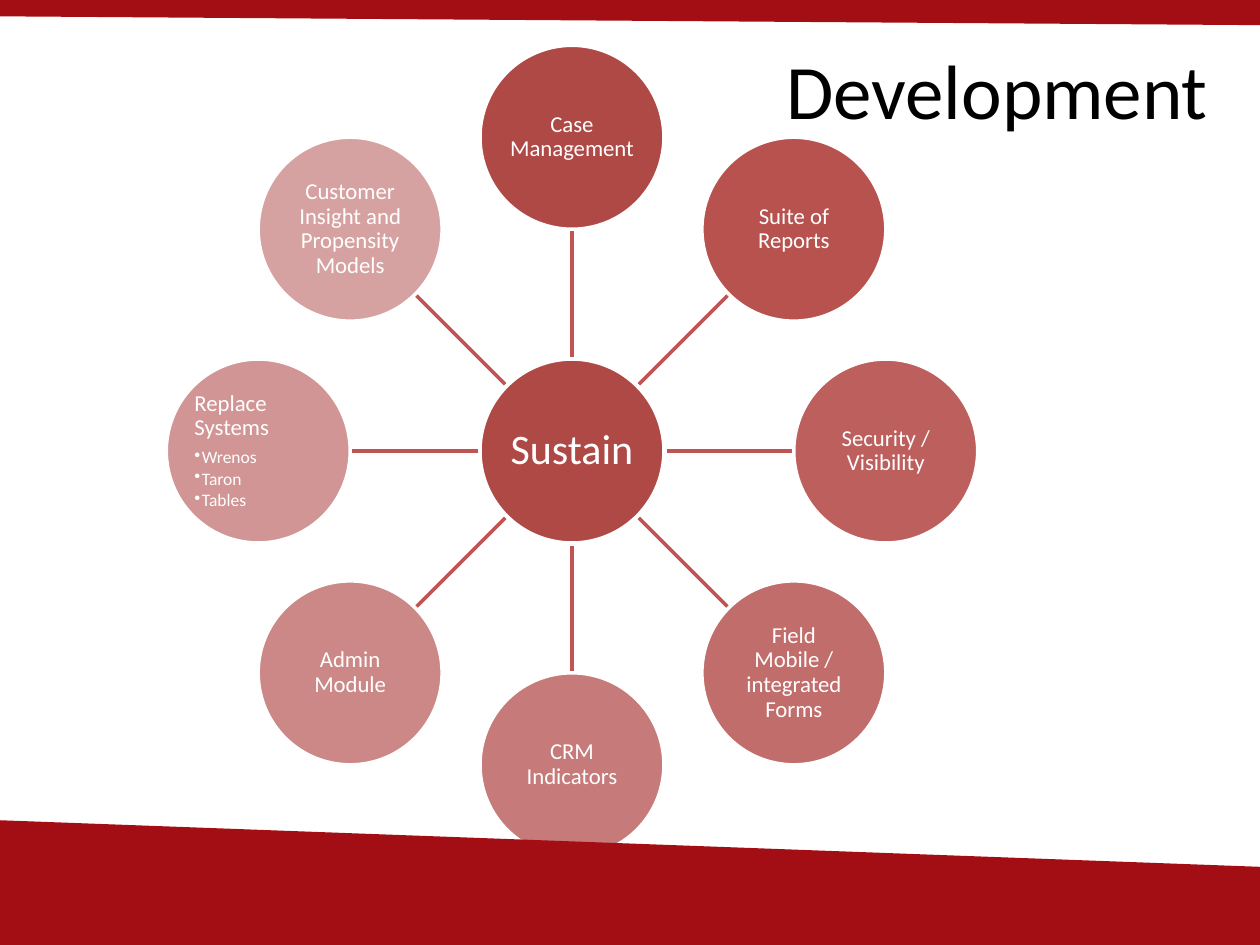
from math import cos, radians, sin

from lxml import etree
from pptx import Presentation
from pptx.dml.color import RGBColor
from pptx.enum.shapes import MSO_CONNECTOR, MSO_SHAPE
from pptx.enum.text import MSO_ANCHOR, PP_ALIGN
from pptx.oxml.ns import qn
from pptx.util import Inches, Pt

CENTER, LEFT = PP_ALIGN.CENTER, PP_ALIGN.LEFT
MIDDLE = MSO_ANCHOR.MIDDLE
OVAL = MSO_SHAPE.OVAL
STRAIGHT = MSO_CONNECTOR.STRAIGHT

HUB_X, HUB_Y = 4.54, 3.58
RADIUS = 0.73
ORBIT = 2.49
NODES = [
    ("Case Management", "AE4946", []),
    ("Suite of Reports", "B8524F", []),
    ("Security / Visibility", "BC5F5D", []),
    ("Field Mobile / integrated Forms", "C16D6B", []),
    ("CRM Indicators", "C67A79", []),
    ("Admin Module", "CB8886", []),
    ("Replace Systems", "D09594", ["Wrenos", "Taron", "Tables"]),
    ("Customer Insight and Propensity Models", "D6A2A1", []),
]


def rgb(value):
    return RGBColor.from_string(value)


class Deck:
    font = "Calibri"
    white = "FFFFFF"
    spoke_color = "C15452"
    band_color = "A20E13"

    def __init__(self, slide):
        self.s = slide

    def run(self, p, text, size, color):
        r = p.add_run()
        r.text = text
        r.font.name = self.font
        r.font.size = Pt(size)
        r.font.color.rgb = rgb(color)

    def title(self, text, x, y, w, h):
        sp = self.s.shapes.title
        sp.left, sp.top, sp.width, sp.height = map(Inches, (x, y, w, h))
        tf = sp.text_frame
        tf.vertical_anchor = MIDDLE
        p = tf.paragraphs[0]
        p.alignment = CENTER
        self.run(p, text, 44, "000000")

    def paragraph(self, p, text, size, align, after):
        p.alignment = align
        p.line_spacing = 0.9
        p.space_after = Pt(after)
        self.run(p, text, size, self.white)

    def bullet(self, p, text):
        self.paragraph(p, text, 10, LEFT, 1.5)
        p.level = 1
        pPr = p._p.get_or_add_pPr()
        pPr.set("marL", str(Inches(0.06)))
        pPr.set("indent", str(Inches(-0.06)))
        etree.SubElement(pPr, qn("a:buChar")).set("char", "•")

    def circle(self, x, y, text, size, color, items=()):
        side = Inches(2 * RADIUS)
        sp = self.s.shapes.add_shape(OVAL, Inches(x - RADIUS), Inches(y - RADIUS), side, side)
        sp.shadow.inherit = False
        sp.fill.solid()
        sp.fill.fore_color.rgb = rgb(color)
        sp.line.color.rgb = rgb(self.white)
        sp.line.width = Pt(2)
        tf = sp.text_frame
        tf.word_wrap = True
        tf.vertical_anchor = MIDDLE
        tf.margin_left = tf.margin_right = tf.margin_top = tf.margin_bottom = Inches(0.01)
        align = LEFT if items else CENTER
        self.paragraph(tf.paragraphs[0], text, size, align, size * 0.35)
        for item in items:
            self.bullet(tf.add_paragraph(), item)

    def spoke(self, x1, y1, x2, y2):
        line = self.s.shapes.add_connector(STRAIGHT, *map(Inches, (x1, y1, x2, y2)))
        line.line.color.rgb = rgb(self.spoke_color)
        line.line.width = Pt(2)
        etree.SubElement(line._element.spPr, qn("a:effectLst"))

    def band(self, points):
        start, *rest = [(Inches(x), Inches(y)) for x, y in points]
        builder = self.s.shapes.build_freeform(*start)
        builder.add_line_segments(rest, close=True)
        sp = builder.convert_to_shape()
        sp.shadow.inherit = False
        sp.fill.solid()
        sp.fill.fore_color.rgb = rgb(self.band_color)
        sp.line.fill.background()


def main():
    prs = Presentation()
    prs.slide_width, prs.slide_height = Inches(10), Inches(7.5)
    deck = Deck(prs.slides.add_slide(prs.slide_layouts[5]))

    deck.title("Development", 6, 0.08, 3.83, 1.25)
    deck.circle(HUB_X, HUB_Y, "Sustain", 24, "AE4946")
    for i, (text, color, items) in enumerate(NODES):
        angle = radians(i * 360 / len(NODES) - 90)
        dx, dy = cos(angle), sin(angle)
        near, far = RADIUS + 0.02, ORBIT - RADIUS
        deck.spoke(HUB_X + near * dx, HUB_Y + near * dy, HUB_X + far * dx, HUB_Y + far * dy)
        deck.circle(HUB_X + ORBIT * dx, HUB_Y + ORBIT * dy, text, 13, color, items)

    deck.band([(0, 6.51), (10, 6.88), (10, 7.5), (0, 7.5)])
    deck.band([(0, 0), (10, 0), (10, 0.2), (0, 0.13)])
    prs.save("out.pptx")


if __name__ == "__main__":
    main()
